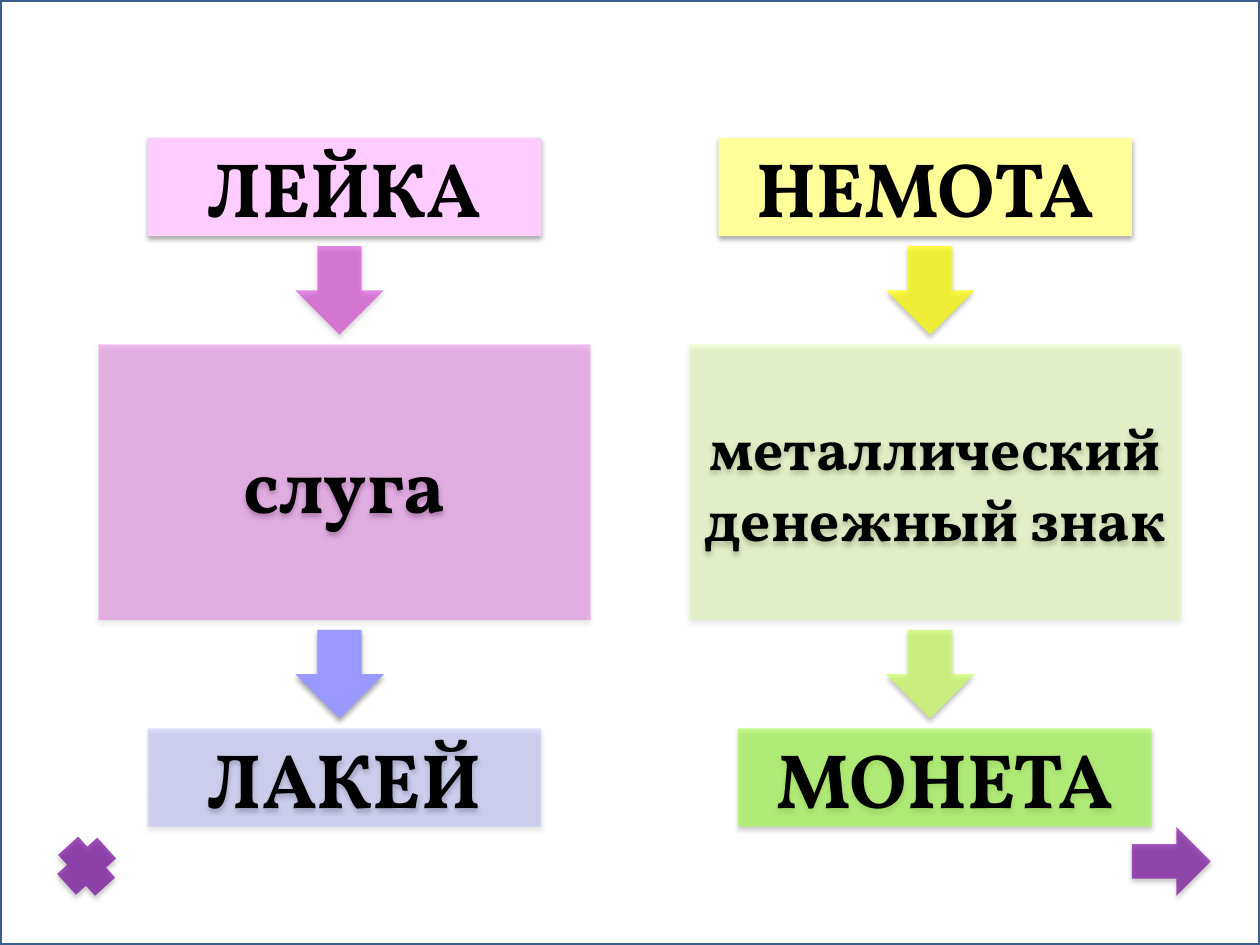
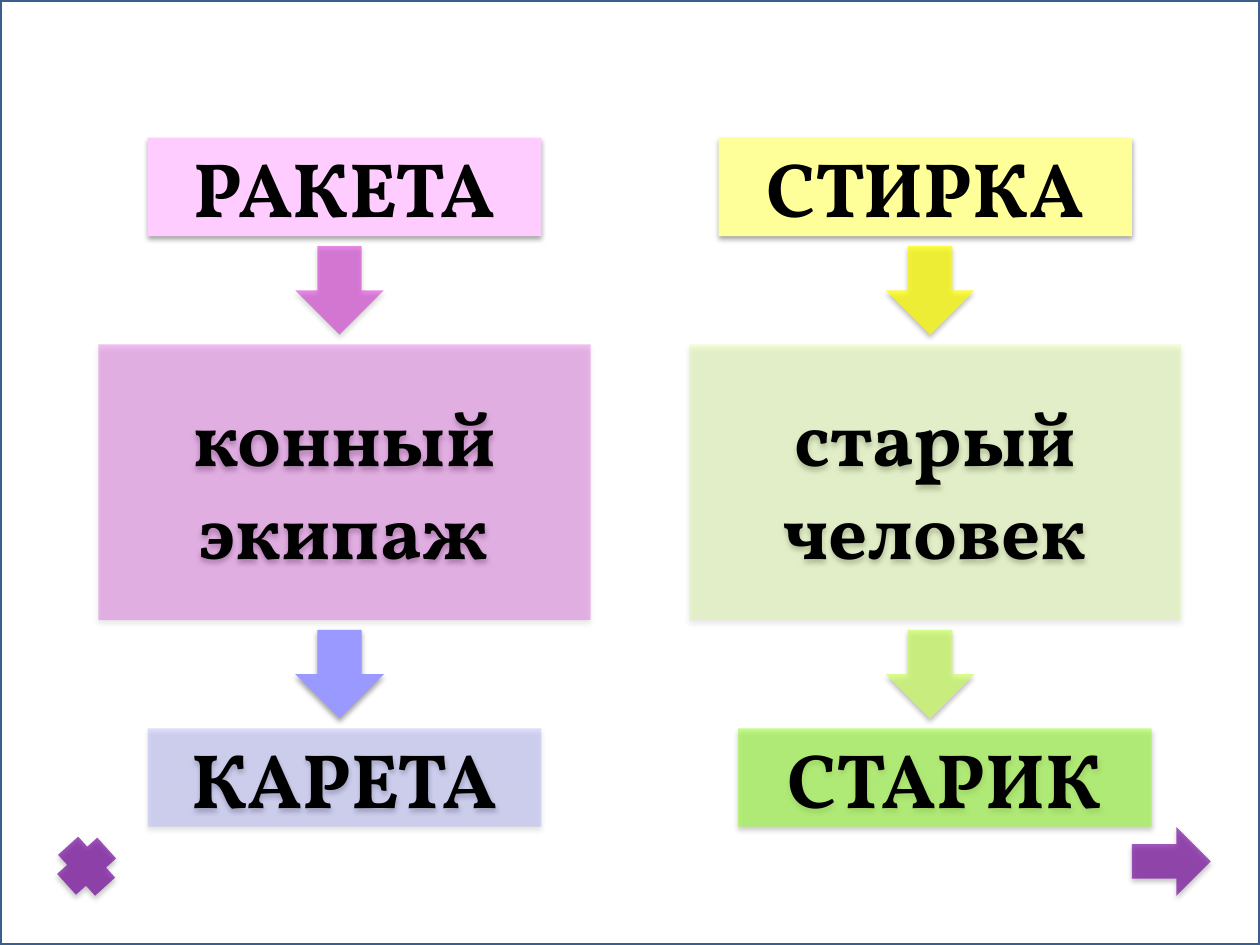
"""Build two anagram slides: a word, a hint and the word made of its letters."""
from lxml import etree
from pptx import Presentation
from pptx.dml.color import RGBColor
from pptx.enum.shapes import MSO_SHAPE
from pptx.enum.text import MSO_ANCHOR, PP_ALIGN
from pptx.oxml.ns import qn
from pptx.util import Pt

RECT, PLUS = MSO_SHAPE.RECTANGLE, MSO_SHAPE.CROSS
DOWN, RIGHT = MSO_SHAPE.DOWN_ARROW, MSO_SHAPE.RIGHT_ARROW
CENTER, MIDDLE = PP_ALIGN.CENTER, MSO_ANCHOR.MIDDLE

SLIDE_W, SLIDE_H = 720, 540
UNIT = SLIDE_W / 128
FONT = "Vollkorn"

BLACK = RGBColor(0x00, 0x00, 0x00)
WHITE = RGBColor(0xFF, 0xFF, 0xFF)
FRAME_BLUE = RGBColor(0x3A, 0x5F, 0x8C)
PINK = RGBColor(0xFF, 0xCC, 0xFF)
MAGENTA = RGBColor(0xCC, 0x00, 0xCC)
LAVENDER = RGBColor(0x99, 0x99, 0xFF)
PALE_YELLOW = RGBColor(0xFF, 0xFF, 0x99)
YELLOW = RGBColor(0xFF, 0xFF, 0x00)
LIME = RGBColor(0xCC, 0xFF, 0x66)
GREEN = RGBColor(0x99, 0xFF, 0x33)
PURPLE = RGBColor(0x72, 0x00, 0x9A)

TOP, GAP = 14, 1
WORD_H, ARROW, HINT_W, HINT_H = 10, 9, 50, 28

LEFT_COLUMN = {
    "left": 10, "word_width": 40, "word_lefts": (15, 15),
    "fills": ((PINK, 100), (MAGENTA, 45), (MAGENTA, 25), (LAVENDER, 100), (LAVENDER, 31)),
}
RIGHT_COLUMN = {
    "left": 70, "word_width": 42, "word_lefts": (73, 75),
    "fills": ((PALE_YELLOW, 100), (YELLOW, 72), (LIME, 25), (LIME, 72), (GREEN, 56)),
}

ANAGRAMS = [
    (("ЛЕЙКА", "слуга", "ЛАКЕЙ", 44),
     ("НЕМОТА", "металлический денежный знак", "МОНЕТА", 34)),
    (("РАКЕТА", "конный экипаж", "КАРЕТА", 44),
     ("СТИРКА", "старый человек", "СТАРИК", 44)),
]


def set_alpha(color_element, percent):
    """Make a colour partly transparent."""
    etree.SubElement(color_element, qn("a:alpha"), val=str(percent * 1000))


def add_shadow(shape):
    """Cast a soft shadow straight down."""
    shape.shadow.inherit = False
    effects = shape._element.spPr.find(qn("a:effectLst"))
    shadow = etree.SubElement(
        effects, qn("a:outerShdw"), blurRad=str(Pt(3.1)), dist=str(Pt(1.8)),
        dir="5400000", rotWithShape="0")
    set_alpha(etree.SubElement(shadow, qn("a:srgbClr"), val=str(BLACK)), 35)


def add_figure(slide, kind, left, top, width, height, fill):
    """Place a borderless shape by grid units, filled with (colour, opacity)."""
    figure = slide.shapes.add_shape(
        kind, *(Pt(units * UNIT) for units in (left, top, width, height)))
    color, opacity = fill
    figure.fill.solid()
    figure.fill.fore_color.rgb = color
    if opacity < 100:
        set_alpha(figure._element.spPr.find(qn("a:solidFill"))[0], opacity)
    figure.line.fill.background()
    add_shadow(figure)
    return figure


def write(shape, text, *, size=44, color=BLACK, bold=True):
    """Write centred text into a shape."""
    frame = shape.text_frame
    frame.word_wrap = True
    frame.vertical_anchor = MIDDLE
    paragraph = frame.paragraphs[0]
    paragraph.alignment = CENTER
    run = paragraph.add_run()
    run.text = text
    run.font.name = FONT
    run.font.size = Pt(size)
    run.font.bold = bold
    run.font.color.rgb = color


def add_frame(slide):
    """Outline the whole slide."""
    frame = slide.shapes.add_shape(RECT, 0, 0, Pt(SLIDE_W), Pt(SLIDE_H))
    frame.shadow.inherit = False
    frame.fill.solid()
    frame.fill.fore_color.rgb = WHITE
    frame.line.color.rgb = FRAME_BLUE
    frame.line.width = Pt(2)


def add_anagram(slide, column, anagram):
    """Stack word, arrow, hint, arrow and answer with equal gaps."""
    word, hint, answer, hint_size = anagram
    left, word_width = column["left"], column["word_width"]
    word_left, answer_left = column["word_lefts"]
    arrow = (DOWN, left + 20, ARROW, ARROW, None, None)
    rows = (
        (RECT, word_left, word_width, WORD_H, word, 44),
        arrow,
        (RECT, left, HINT_W, HINT_H, hint, hint_size),
        arrow,
        (RECT, answer_left, word_width, WORD_H, answer, 44),
    )
    top = TOP
    for (kind, x, width, height, text, size), fill in zip(rows, column["fills"]):
        figure = add_figure(slide, kind, x, top, width, height, fill)
        if text:
            write(figure, text, size=size)
        top += height + GAP


def add_navigation(slide):
    """Add the closing cross and the forward arrow."""
    add_figure(slide, RIGHT, 115, 84, 8, 7, (PURPLE, 65))
    cross = add_figure(slide, PLUS, 6, 85.25, 5.6, 5.5, (PURPLE, 67))
    cross.rotation = 47.9


def main():
    """Build and save the presentation."""
    presentation = Presentation()
    presentation.slide_width, presentation.slide_height = Pt(SLIDE_W), Pt(SLIDE_H)
    blank = presentation.slide_layouts[6]
    for anagrams in ANAGRAMS:
        slide = presentation.slides.add_slide(blank)
        add_frame(slide)
        for column, anagram in zip((LEFT_COLUMN, RIGHT_COLUMN), anagrams):
            add_anagram(slide, column, anagram)
        add_navigation(slide)
    presentation.save("out.pptx")


if __name__ == "__main__":
    main()
